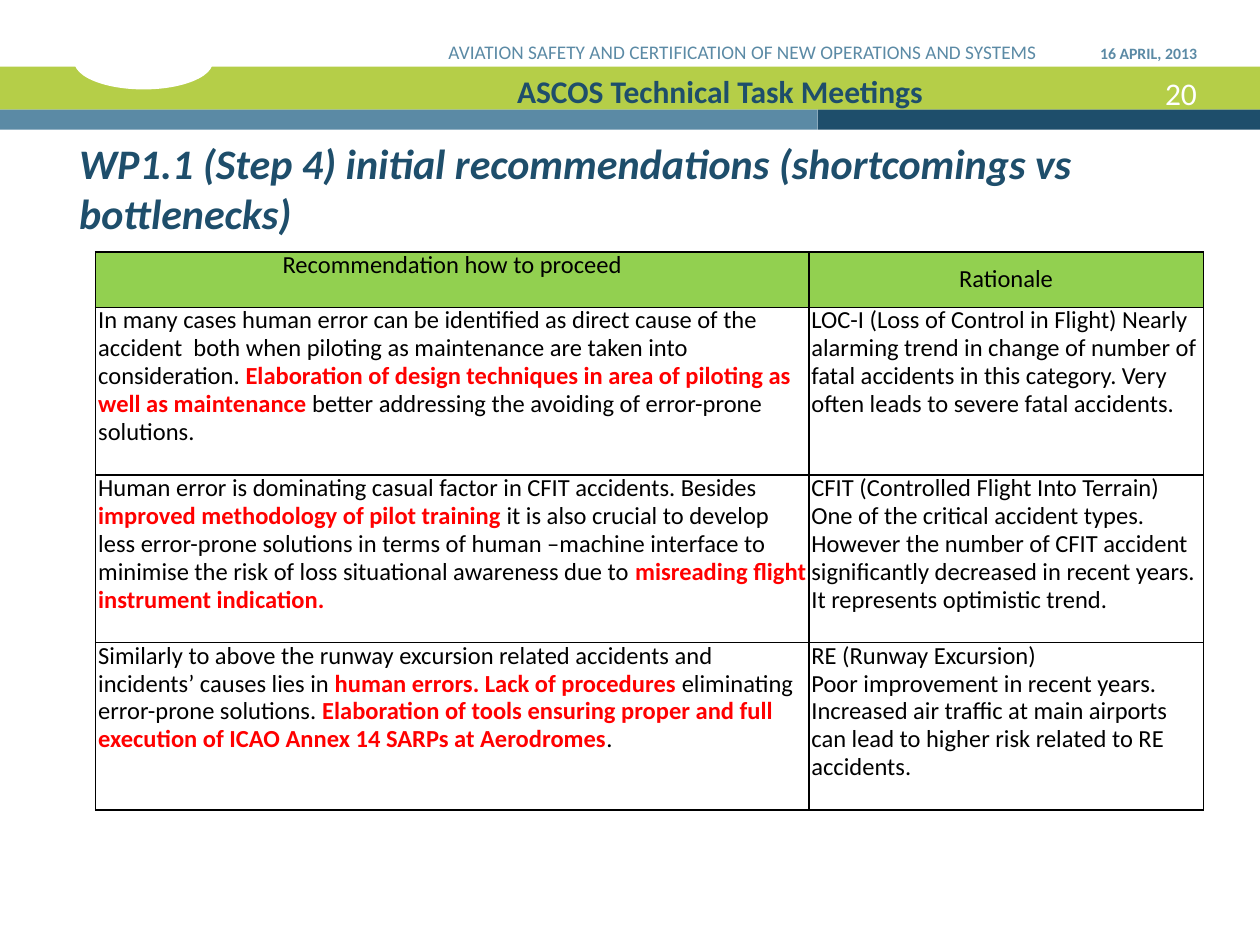
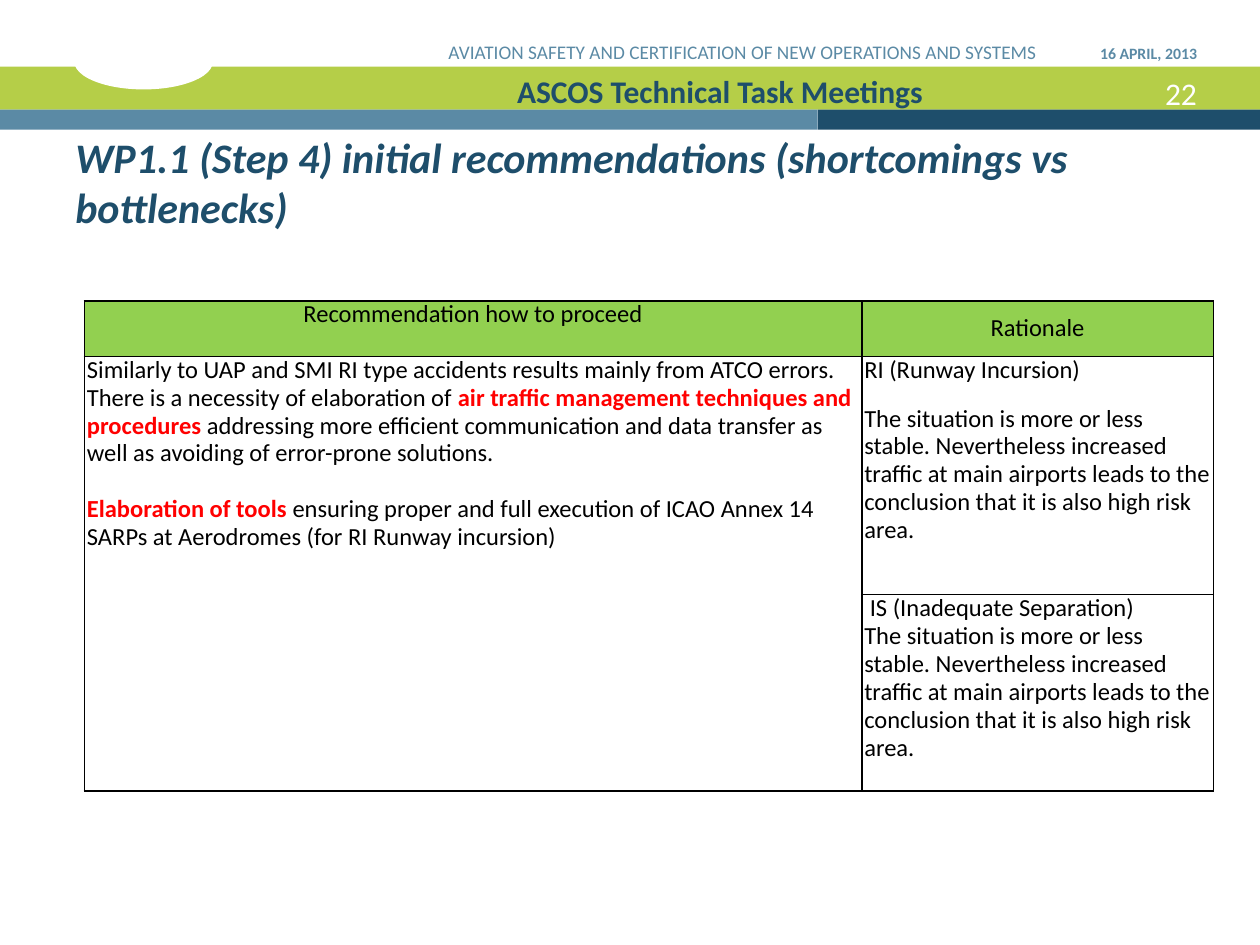
import pptx
import pptx.util
import pptx.dml.color
import pptx.enum.shapes
import pptx.enum.text
import pptx.oxml
import pptx.oxml.ns

Inches, Pt = pptx.util.Inches, pptx.util.Pt
ALIGN, ANCHOR = pptx.enum.text.PP_ALIGN, pptx.enum.text.MSO_ANCHOR
SHAPE = pptx.enum.shapes.MSO_SHAPE
FONT = "Calibri"
LIME, NAVY, STEEL, WHITE = "B5CE48", "1E4E6B", "5B8AA5", "FFFFFF"
BLACK, RED, HEADER_GREEN = "000000", "FF0000", "92D050"

BANDS = [
    (SHAPE.RECTANGLE, (0, 0.53, 10, 0.34), LIME),
    (SHAPE.RECTANGLE, (6.49, 0.87, 3.51, 0.16), NAVY),
    (SHAPE.RECTANGLE, (0, 0.87, 6.49, 0.16), STEEL),
    (SHAPE.OVAL, (0.59, 0.27, 1.1, 0.44), WHITE),
]
TITLE = "WP1.1 (Step 4) initial recommendations (shortcomings vs bottlenecks)"
HEADINGS = ("Recommendation how to proceed", "Rationale")
STABLE = ("The situation is more or less stable. Nevertheless increased traffic at main "
          "airports leads to the conclusion that it is also high risk area.")
HEADER_HEIGHT, LINE_PITCH = 0.44, 16

HUMAN_ERROR_ROWS = [
    (["In many cases human error can be identified as direct cause of the accident  both when "
      "piloting as maintenance are taken into consideration. *Elaboration of design techniques "
      "in area of piloting as well as maintenance* better addressing the avoiding of "
      "error-prone solutions."],
     ["LOC-I (Loss of Control in Flight) Nearly alarming trend in change of number of fatal "
      "accidents in this category. Very often leads to severe fatal accidents."]),
    (["Human error is dominating casual factor in CFIT accidents. Besides *improved methodology "
      "of pilot training *it is also crucial to develop less error-prone solutions in terms of "
      "human –machine interface to minimise the risk of loss situational awareness due to "
      "*misreading flight instrument indication.*"],
     ["CFIT (Controlled Flight Into Terrain)",
      "One of the critical accident types. However the number of CFIT accident significantly "
      "decreased in recent years. It represents optimistic trend."]),
    (["Similarly to above the runway excursion related accidents and  incidents’ causes lies in "
      "*human errors. Lack of procedures *eliminating error-prone solutions. *Elaboration of "
      "tools ensuring proper and full execution of ICAO Annex 14 SARPs at Aerodromes*."],
     ["RE (Runway Excursion)",
      "Poor improvement in recent years. Increased air traffic at main airports can lead to "
      "higher risk related to RE accidents."]),
]
TRAFFIC_ROWS = [
    (["Similarly to UAP and SMI RI type accidents results mainly from ATCO errors. There is a "
      "necessity of elaboration of *air traffic management techniques and procedures* "
      "addressing more efficient communication and data transfer as well as avoiding of "
      "error-prone solutions.",
      "*Elaboration of tools *ensuring proper and full execution of ICAO Annex 14 SARPs at "
      "Aerodromes (for RI Runway incursion)"],
     ["RI (Runway Incursion)", STABLE]),
    ([], [" IS (Inadequate Separation)", STABLE]),
]


def rgb(hex_value):
    """Turn a hex string into a colour."""
    return pptx.dml.color.RGBColor.from_string(hex_value)


def apply(target, settings):
    """Set every attribute named in settings on target."""
    for name, value in settings.items():
        setattr(target, name, value)


def add_run(paragraph, text, size, color, **style):
    """Append a formatted run to a paragraph."""
    run = paragraph.add_run()
    run.text = text
    apply(run.font, {"name": FONT, "size": Pt(size), "bold": False, **style})
    run.font.color.rgb = rgb(color)


def add_label(slide, box, text, size, color, align=ALIGN.LEFT, frame=None, **style):
    """Place one line or heading of text in a box."""
    text_frame = slide.shapes.add_textbox(*map(Inches, box)).text_frame
    apply(text_frame, {"word_wrap": True, **(frame or {})})
    paragraph = text_frame.paragraphs[0]
    paragraph.alignment = align
    add_run(paragraph, text, size, color, **style)


def add_banner(slide, number):
    """Draw the coloured bands and the running header texts."""
    for kind, box, color in BANDS:
        band = slide.shapes.add_shape(kind, *map(Inches, box))
        band.shadow.inherit = False
        band.fill.solid()
        band.fill.fore_color.rgb = rgb(color)
        band.line.fill.background()
    flush_right = {"vertical_anchor": ANCHOR.BOTTOM, "margin_right": 0}
    add_label(slide, (8.67, 0.54, 0.83, 0.4), str(number), 18, WHITE, ALIGN.RIGHT, flush_right)
    add_label(slide, (8.31, 0.05, 1.19, 0.5), "16 APRIL, 2013", 9, STEEL, ALIGN.RIGHT,
              flush_right, bold=True)
    add_label(slide, (2.95, 0.05, 5.28, 0.5),
              "AVIATION SAFETY AND CERTIFICATION OF NEW OPERATIONS AND SYSTEMS",
              11, STEEL, ALIGN.RIGHT, flush_right)
    add_label(slide, (2.65, 0.52, 6.13, 0.4), "ASCOS Technical Task Meetings", 18, NAVY,
              ALIGN.CENTER, bold=True)


def style_cell(cell, fill=None):
    """Give a cell thin black borders, narrow margins and its fill."""
    properties = cell._tc.get_or_add_tcPr()
    for side in "LRTB":
        properties.append(pptx.oxml.parse_xml(
            f'<a:ln{side} {pptx.oxml.ns.nsdecls("a")} w="{Pt(1)}"><a:solidFill>'
            f'<a:srgbClr val="{BLACK}"/></a:solidFill></a:ln{side}>'))
    if fill:
        cell.fill.solid()
        cell.fill.fore_color.rgb = rgb(fill)
    else:
        cell.fill.background()
    apply(cell, {"margin_left": Inches(0.02), "margin_right": Inches(0.02),
                 "margin_top": 0, "margin_bottom": 0})


def write_cell(cell, paragraphs, gap=0, align=ALIGN.LEFT):
    """Write paragraphs in which asterisks enclose red bold phrases."""
    for index, text in enumerate(paragraphs):
        paragraph = cell.text_frame.paragraphs[0] if index == 0 else cell.text_frame.add_paragraph()
        apply(paragraph, {"alignment": align, "line_spacing": Pt(LINE_PITCH),
                          "space_before": Pt(gap if index else 0)})
        for part, phrase in enumerate(text.split("*")):
            if phrase:
                stressed = part % 2 == 1
                add_run(paragraph, phrase, 14, RED if stressed else BLACK, bold=stressed)


def add_recommendations(slide, box, first_width, row_heights, rows, gaps):
    """Build the table of recommendations and their rationale."""
    table = slide.shapes.add_table(len(rows) + 1, 2, *map(Inches, box)).table
    apply(table, {"first_row": False, "horz_banding": False})
    for column, width in zip(table.columns, (first_width, box[2] - first_width)):
        column.width = Inches(width)
    for row, height in zip(table.rows, (HEADER_HEIGHT, *row_heights)):
        row.height = Inches(height)
    for column, heading in enumerate(HEADINGS):
        cell = table.cell(0, column)
        style_cell(cell, HEADER_GREEN)
        write_cell(cell, [heading], align=ALIGN.CENTER)
        cell.vertical_anchor = ANCHOR.MIDDLE if column else ANCHOR.TOP
    for index, (row, row_gaps) in enumerate(zip(rows, gaps), 1):
        for column, paragraphs in enumerate(row):
            cell = table.cell(index, column)
            style_cell(cell)
            write_cell(cell, paragraphs, row_gaps[column])
        if not row[0]:
            table.cell(index - 1, 0).merge(table.cell(index, 0))


def add_step_slide(deck, number, title_box, title_anchor, **table):
    """Add one recommendations slide with banner, title and table."""
    slide = deck.slides.add_slide(deck.slide_layouts[6])
    add_banner(slide, number)
    add_label(slide, title_box, TITLE, 24, NAVY, frame={"vertical_anchor": title_anchor},
              bold=True, italic=True)
    add_recommendations(slide, **table)


def main():
    """Build and save the deck."""
    deck = pptx.Presentation()
    apply(deck, {"slide_width": Inches(10), "slide_height": Inches(7.5)})
    add_step_slide(deck, 20, (0.53, 1.04, 8.78, 0.91), ANCHOR.TOP,
                   box=(0.76, 2, 8.79, 4.44), first_width=5.66, row_heights=[1.33] * 3,
                   rows=HUMAN_ERROR_ROWS, gaps=[(0, 0)] * 3)
    add_step_slide(deck, 22, (0.5, 0.72, 9, 1.17), ANCHOR.BOTTOM,
                   box=(0.67, 2.39, 8.96, 3.89), first_width=6.17, row_heights=[1.89, 1.56],
                   rows=TRAFFIC_ROWS, gaps=[(LINE_PITCH, 12), (0, 0)])
    deck.save("out.pptx")


if __name__ == "__main__":
    main()
